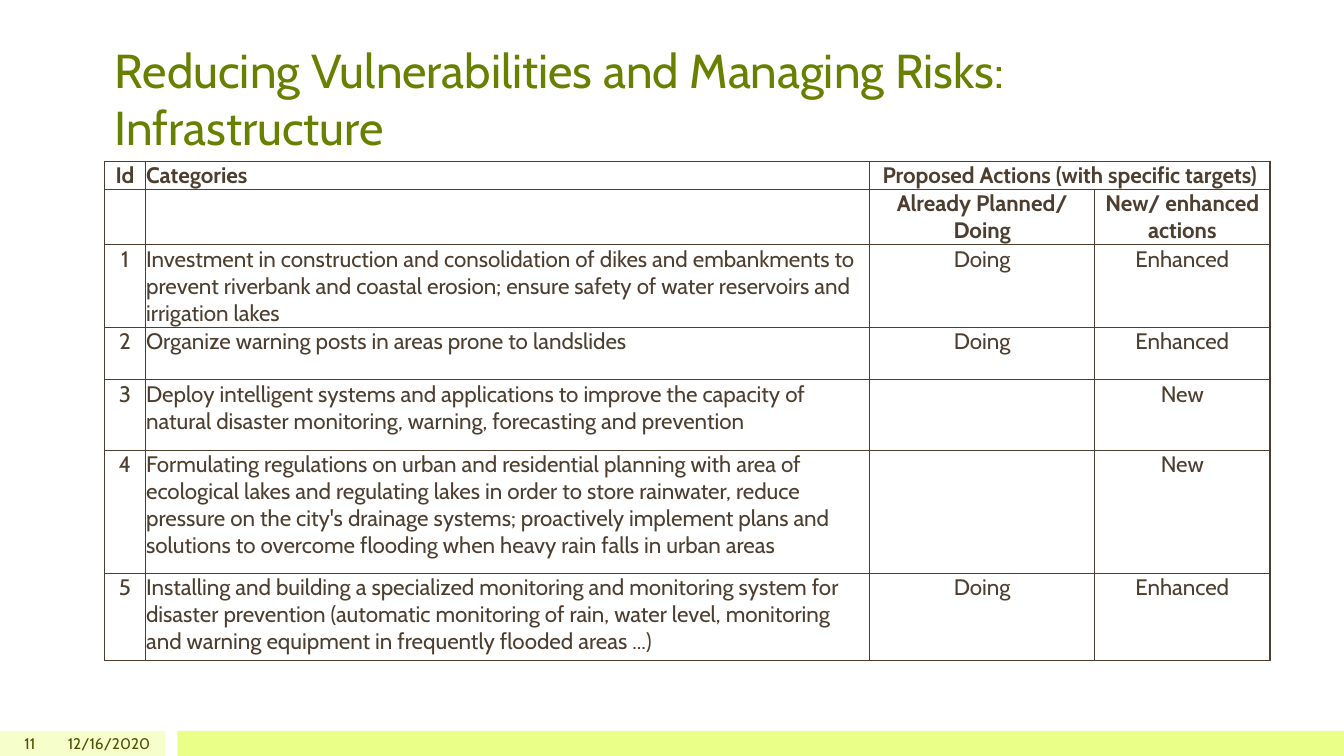
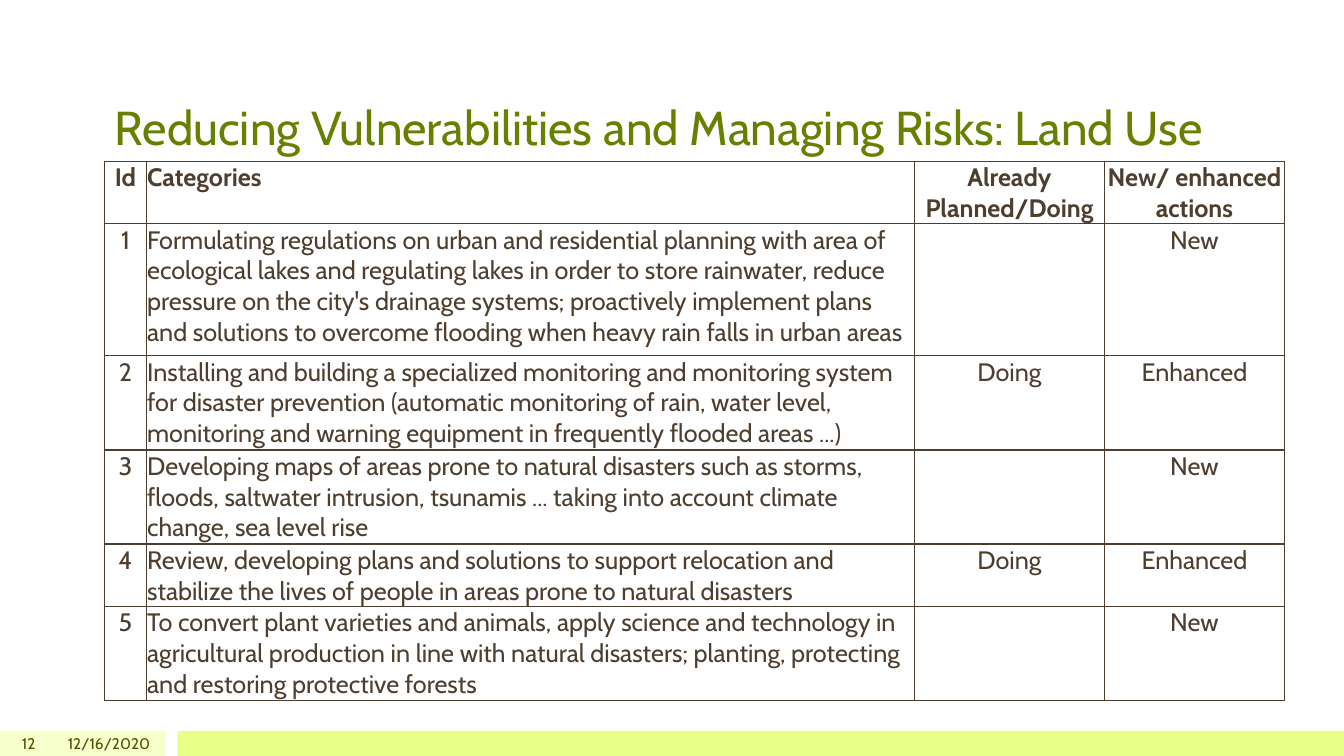
from lxml.etree import SubElement
from pptx import Presentation
from pptx.dml.color import RGBColor
from pptx.enum.shapes import MSO_SHAPE
from pptx.enum.text import MSO_ANCHOR, MSO_AUTO_SIZE, PP_ALIGN
from pptx.oxml.ns import qn
from pptx.util import Inches, Pt

TITLE_GREEN = RGBColor(0x68, 0x80, 0x00)
FOOTER_GREEN = RGBColor(0x45, 0x55, 0x00)
PALE_BAND = RGBColor(0xF6, 0xFF, 0xCC)
LIME_BAND = RGBColor(0xE9, 0xFF, 0x88)
BROWN = RGBColor(0x4D, 0x3E, 0x2F)

FONT = "Cabin"
GRID_COLUMNS = 40
GRID_ROWS = 30
MARGIN = 3.12
FOOTER_ROW = 29
DATE = "12/16/2020"

URBAN_PLANNING = (
    "Formulating regulations on urban and residential planning with area of "
    "ecological lakes and regulating lakes in order to store rainwater, reduce "
    "pressure on the city's drainage systems; proactively implement plans and "
    "solutions to overcome flooding when heavy rain falls in urban areas"
)
MONITORING = (
    "Installing and building a specialized monitoring and monitoring system for "
    "disaster prevention (automatic monitoring of rain, water level, monitoring "
    "and warning equipment in frequently flooded areas ...)"
)

INFRASTRUCTURE_HEADER = [
    ("Id", "Categories", "Proposed Actions (with specific targets)", ""),
    ("", "", "Already Planned/ Doing", "New/ enhanced actions"),
]
INFRASTRUCTURE_ACTIONS = [
    ("Investment in construction and consolidation of dikes and embankments to "
     "prevent riverbank and coastal erosion; ensure safety of water reservoirs and "
     "irrigation lakes", "Doing", "Enhanced"),
    ("Organize warning posts in areas prone to landslides", "Doing", "Enhanced"),
    ("Deploy intelligent systems and applications to improve the capacity of "
     "natural disaster monitoring, warning, forecasting and prevention", "", "New"),
    (URBAN_PLANNING, "", "New"),
    (MONITORING, "Doing", "Enhanced"),
]

LAND_USE_HEADER = [
    ("Id", "Categories", "Already Planned/Doing", "New/ enhanced actions"),
]
LAND_USE_ACTIONS = [
    (URBAN_PLANNING, "", "New"),
    (MONITORING, "Doing", "Enhanced"),
    ("Developing maps of areas prone to natural disasters such as storms, floods, "
     "saltwater intrusion, tsunamis ... taking into account climate change, sea "
     "level rise", "", "New"),
    ("Review, developing plans and solutions to support relocation and stabilize "
     "the lives of people in areas prone to natural disasters", "Doing", "Enhanced"),
    ("To convert plant varieties and animals, apply science and technology in "
     "agricultural production in line with natural disasters; planting, protecting "
     "and restoring protective forests", "", "New"),
]


class Deck:
    def __init__(self):
        self.presentation = Presentation()
        self.presentation.slide_width = Inches(13.33)
        self.presentation.slide_height = Inches(7.5)
        self.slide = None

    def across(self, columns):
        return round(self.presentation.slide_width * columns / GRID_COLUMNS)

    def down(self, rows):
        return round(self.presentation.slide_height * rows / GRID_ROWS)

    def area(self, left, top, width, height):
        return self.across(left), self.down(top), self.across(width), self.down(height)

    def add_text(self, frame, text, size, color, align=PP_ALIGN.LEFT, bold=False):
        paragraph = frame.paragraphs[0]
        paragraph.alignment = align
        run = paragraph.add_run()
        run.text = text
        run.font.name = FONT
        run.font.size = Pt(size)
        run.font.bold = bold
        run.font.color.rgb = color

    def start_slide(self, title, title_width, number):
        layout = self.presentation.slide_layouts[5]
        self.slide = self.presentation.slides.add_slide(layout)
        self.band(0, 4.92, PALE_BAND)
        self.band(5.28, 34.72, LIME_BAND)
        self.title(title, title_width)
        self.footer_text(0, 1.35, str(number))
        self.footer_text(1.5, 3.27, DATE)

    def band(self, left, width, color):
        place = self.area(left, FOOTER_ROW, width, 1)
        band = self.slide.shapes.add_shape(MSO_SHAPE.RECTANGLE, *place)
        band.shadow.inherit = False
        band.fill.solid()
        band.fill.fore_color.rgb = color
        band.line.fill.background()

    def title(self, text, width):
        title = self.slide.shapes.title
        title.left, title.top, title.width, title.height = self.area(
            MARGIN, 1.2, width, 5.16)
        frame = title.text_frame
        frame.word_wrap = True
        frame.auto_size = MSO_AUTO_SIZE.NONE
        frame.vertical_anchor = MSO_ANCHOR.BOTTOM
        self.add_text(frame, text, 34, TITLE_GREEN)

    def footer_text(self, left, width, text):
        place = self.area(left, FOOTER_ROW, width, 1)
        frame = self.slide.shapes.add_textbox(*place).text_frame
        frame.word_wrap = True
        frame.vertical_anchor = MSO_ANCHOR.MIDDLE
        self.add_text(frame, text, 11, FOOTER_GREEN, PP_ALIGN.RIGHT)

    def action_table(self, header, actions, widths, heights, size):
        numbered = [(str(i), *action) for i, action in enumerate(actions, 1)]
        rows = header + numbered
        place = self.area(MARGIN, 6.4, sum(widths), sum(heights))
        table = self.slide.shapes.add_table(len(rows), len(widths), *place).table
        table.first_row = False
        table.horz_banding = False
        for column, width in zip(table.columns, widths):
            column.width = self.across(width)
        for row, height in zip(table.rows, heights):
            row.height = self.down(height)
        for r, texts in enumerate(rows):
            for c, text in enumerate(texts):
                cell = table.cell(r, c)
                self.style_cell(cell)
                if text:
                    align = PP_ALIGN.LEFT if c == 1 else PP_ALIGN.CENTER
                    self.add_text(cell.text_frame, text, size, BROWN, align,
                                  r < len(header))
        return table

    def style_cell(self, cell):
        cell.margin_left = cell.margin_right = cell.margin_top = Inches(0.01)
        cell.margin_bottom = 0
        cell.vertical_anchor = MSO_ANCHOR.TOP
        properties = cell._tc.get_or_add_tcPr()
        for side in ("a:lnL", "a:lnR", "a:lnT", "a:lnB"):
            border = SubElement(properties, qn(side), w=str(Pt(1)))
            fill = SubElement(border, qn("a:solidFill"))
            SubElement(fill, qn("a:srgbClr"), val=str(BROWN))
        cell.fill.background()


def main():
    deck = Deck()

    deck.start_slide(
        "Reducing Vulnerabilities and Managing Risks: Infrastructure", 32.25, 11)
    infrastructure = deck.action_table(
        INFRASTRUCTURE_HEADER, INFRASTRUCTURE_ACTIONS,
        [1.2, 21.57, 6.69, 5.22],
        [1.11, 2.2, 3.28, 2.08, 2.8, 4.88, 3.48], 16)
    infrastructure.cell(0, 2).merge(infrastructure.cell(0, 3))

    deck.start_slide(
        "Reducing Vulnerabilities and Managing Risks: Land Use", 35.1, 12)
    deck.action_table(
        LAND_USE_HEADER, LAND_USE_ACTIONS,
        [1.23, 22.86, 5.67, 5.34],
        [2.48, 5.24, 3.74, 3.73, 2.47, 3.74], 18)

    deck.presentation.save("out.pptx")


if __name__ == "__main__":
    main()
